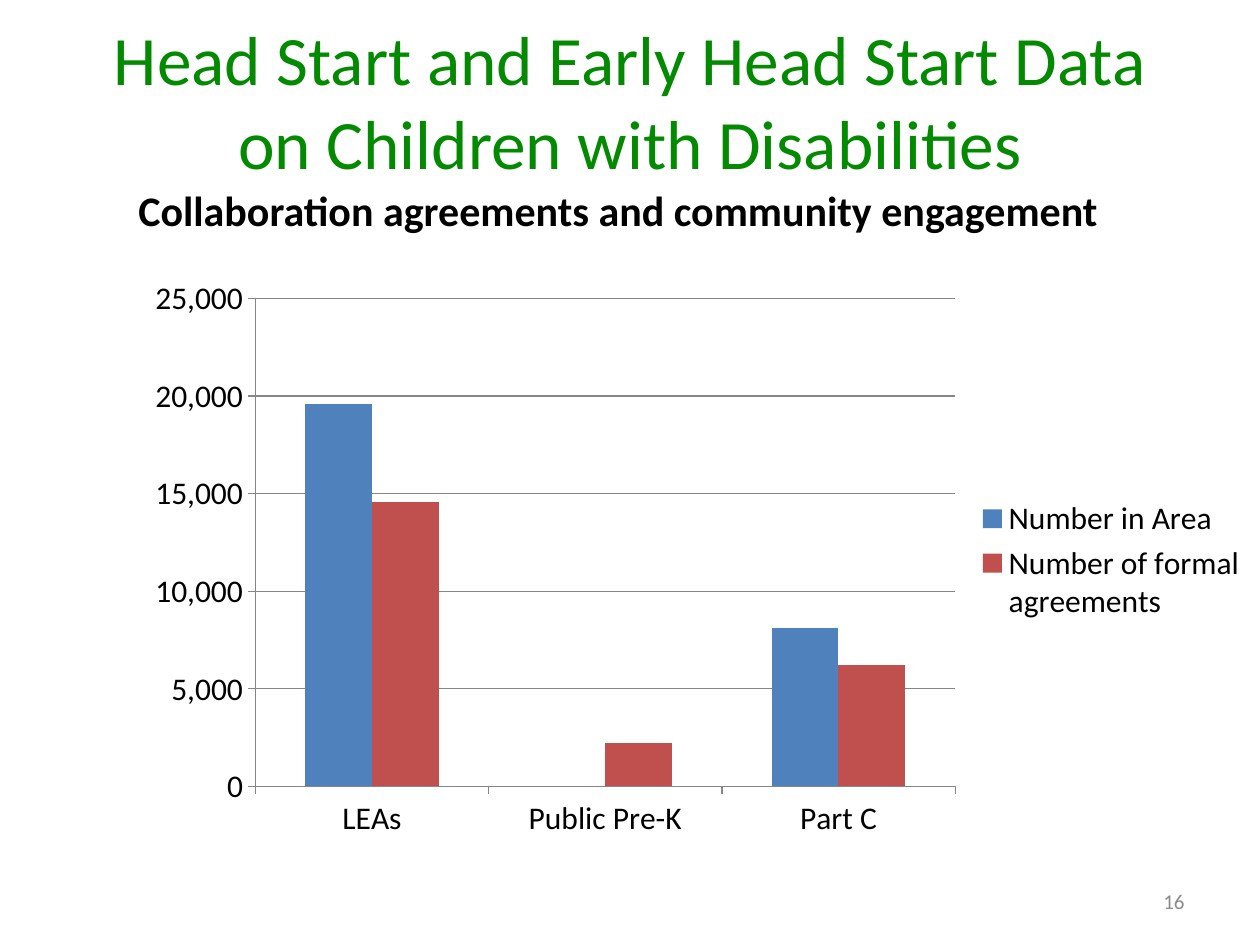
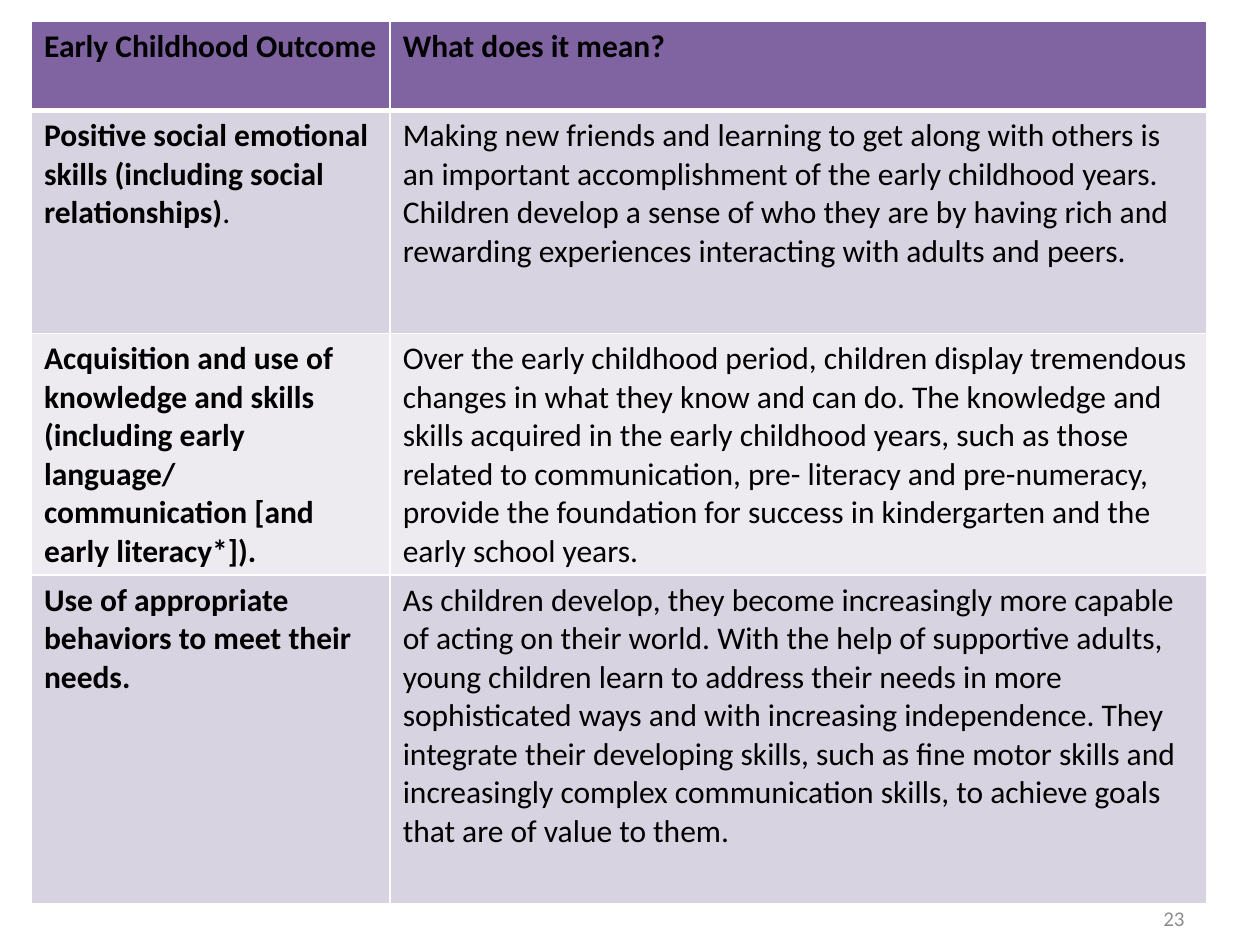
from dataclasses import dataclass

from lxml import etree
from pptx import Presentation
from pptx.chart.data import CategoryChartData
from pptx.dml.color import RGBColor
from pptx.enum.chart import XL_CHART_TYPE as ChartType
from pptx.enum.chart import XL_LEGEND_POSITION as LegendPosition
from pptx.enum.chart import XL_TICK_MARK as TickMark
from pptx.enum.text import MSO_ANCHOR as Anchor
from pptx.enum.text import MSO_AUTO_SIZE as AutoSize
from pptx.enum.text import PP_ALIGN as Align
from pptx.oxml import parse_xml
from pptx.oxml.ns import nsdecls, qn
from pptx.util import Pt

# Shared style
FONT = "Calibri"
BLACK, WHITE, GREEN, GRAY = "000000", "FFFFFF", "038A00", "8C8C8C"
AXIS_GRAY = "868686"
HEADER_PURPLE, BAND_DARK, BAND_LIGHT = "8064A2", "D8D3E0", "EDEAF0"
TITLE_ONLY, BLANK = 5, 6


@dataclass
class Box:
    left: float
    top: float
    width: float
    height: float

    def lengths(self) -> tuple:
        return Pt(self.left), Pt(self.top), Pt(self.width), Pt(self.height)


@dataclass
class Span:
    text: str
    size: float = 18
    bold: bool = False
    color: str = BLACK


@dataclass
class Series:
    name: str
    values: tuple
    color: str


@dataclass
class Outcome:
    name: tuple
    meaning: str
    height: float


CATEGORIES = ("LEAs", "Public Pre-K", "Part C")
AGREEMENT_SERIES = (
    Series("Number in Area", (19600, None, 8100), "4F81BD"),
    Series("Number of formal agreements", (14600, 2200, 6200), "C0504D"),
)

COLUMN_WIDTHS = (205, 466.75)
HEADER_HEIGHT = 51.2
HEADINGS = ("Early Childhood Outcome", "What does it mean?")
OUTCOMES = (
    Outcome(
        (Span("Positive social emotional skills (including social relationships)", bold=True),
         Span(".")),
        "Making new friends and learning to get along with others is an important "
        "accomplishment of the early childhood years. Children develop a sense of who "
        "they are by having rich and rewarding experiences interacting with adults and peers.",
        127.5),
    Outcome(
        (Span("Acquisition and use of knowledge and skills (including early language/ "
              "communication [and early literacy*]).", bold=True),),
        "Over the early childhood period, children display tremendous changes in what they "
        "know and can do. The knowledge and skills acquired in the early childhood years, "
        "such as those related to communication, pre- literacy and pre-numeracy, provide the "
        "foundation for success in kindergarten and the early school years.",
        138),
    Outcome(
        (Span("Use of appropriate behaviors to meet their needs.", bold=True),),
        "As children develop, they become increasingly more capable of acting on their world. "
        "With the help of supportive adults, young children learn to address their needs in "
        "more sophisticated ways and with increasing independence. They integrate their "
        "developing skills, such as fine motor skills and increasingly complex communication "
        "skills, to achieve goals that are of value to them.",
        188),
)


def rgb(color: str) -> RGBColor:
    return RGBColor.from_string(color)


def style_font(font, size: float, color: str, bold: bool = False) -> None:
    font.name, font.size, font.bold = FONT, Pt(size), bold
    font.color.rgb = rgb(color)


def write(para, *spans: Span) -> None:
    for span in spans:
        run = para.add_run()
        run.text = span.text
        style_font(run.font, span.size, span.color, span.bold)


def add_title(page, box: Box, text: str) -> None:
    title = page.shapes.title
    title.left, title.top, title.width, title.height = box.lengths()
    frame = title.text_frame
    frame.auto_size, frame.vertical_anchor = AutoSize.NONE, Anchor.MIDDLE
    para = frame.paragraphs[0]
    para.alignment = Align.CENTER
    write(para, Span(text, 39.6, color=GREEN))


def add_text(page, box: Box, span: Span, align=Align.LEFT, anchor=Anchor.TOP) -> None:
    frame = page.shapes.add_textbox(*box.lengths()).text_frame
    frame.word_wrap, frame.vertical_anchor = True, anchor
    para = frame.paragraphs[0]
    para.alignment = align
    write(para, span)


def add_page_number(page, number: int, top: float) -> None:
    add_text(page, Box(516, top, 168, 28.75), Span(str(number), 12, color=GRAY),
             Align.RIGHT, Anchor.MIDDLE)


def place_plot(chart, x: float, y: float, width: float, height: float) -> None:
    """Fix the inner plot area, in fractions of the chart."""
    area = chart.plots[0]._element.getparent()
    for old in area.findall(qn("c:layout")):
        area.remove(old)
    sizes = "".join(f'<c:{tag} val="{value}"/>'
                    for tag, value in zip("xywh", (x, y, width, height)))
    area.insert(0, parse_xml(
        f'<c:layout {nsdecls("c")}><c:manualLayout><c:layoutTarget val="inner"/>'
        f'<c:xMode val="edge"/><c:yMode val="edge"/>{sizes}</c:manualLayout></c:layout>'))


def add_column_chart(page, box: Box) -> None:
    data = CategoryChartData(number_format="#,##0")
    data.categories = CATEGORIES
    for series in AGREEMENT_SERIES:
        data.add_series(series.name, series.values)
    chart = page.shapes.add_chart(ChartType.COLUMN_CLUSTERED, *box.lengths(), data).chart
    style_font(chart.font, 18, BLACK)
    chart.has_title = False
    chart.has_legend = True
    chart.legend.position = LegendPosition.RIGHT
    chart.legend.include_in_layout = False

    # Bars
    plot = chart.plots[0]
    plot.gap_width, plot.overlap, plot.vary_by_categories = 150, 0, False
    for drawn, series in zip(plot.series, AGREEMENT_SERIES):
        drawn.format.fill.solid()
        drawn.format.fill.fore_color.rgb = rgb(series.color)

    # Axes
    values = chart.value_axis
    values.minimum_scale, values.maximum_scale, values.major_unit = 0, 25000, 5000
    values.has_major_gridlines = True
    for axis in (chart.category_axis, values):
        axis.major_tick_mark = TickMark.OUTSIDE
    for line_owner in (chart.category_axis, values, values.major_gridlines):
        line_owner.format.line.width = Pt(0.75)
        line_owner.format.line.color.rgb = rgb(AXIS_GRAY)
    place_plot(chart, 0.11, 0.05, 0.62, 0.84)


def set_borders(cell, top: float, bottom: float) -> None:
    properties = cell._tc.get_or_add_tcPr()
    widths = {"lnL": 1, "lnR": 1, "lnT": top, "lnB": bottom}
    for position, (tag, width) in enumerate(widths.items()):
        line = etree.Element(qn(f"a:{tag}"), w=str(Pt(width)))
        fill = etree.SubElement(line, qn("a:solidFill"))
        etree.SubElement(fill, qn("a:srgbClr"), val=WHITE)
        properties.insert(position, line)


def add_outcome_table(page, left: float, top: float) -> None:
    heights = [HEADER_HEIGHT] + [outcome.height for outcome in OUTCOMES]
    rows = [[(Span(heading, bold=True),) for heading in HEADINGS]]
    rows += [[outcome.name, (Span(outcome.meaning),)] for outcome in OUTCOMES]
    box = Box(left, top, sum(COLUMN_WIDTHS), sum(heights))
    table = page.shapes.add_table(len(rows), len(HEADINGS), *box.lengths()).table
    for column, width in zip(table.columns, COLUMN_WIDTHS):
        column.width = Pt(width)
    for row_index, (spans_in_row, height) in enumerate(zip(rows, heights)):
        table.rows[row_index].height = Pt(height)
        if row_index == 0:
            color = HEADER_PURPLE
        else:
            color = BAND_DARK if row_index % 2 else BAND_LIGHT
        for column_index, spans in enumerate(spans_in_row):
            cell = table.cell(row_index, column_index)
            cell.fill.solid()
            cell.fill.fore_color.rgb = rgb(color)
            set_borders(cell, top=3 if row_index == 1 else 1,
                        bottom=3 if row_index == 0 else 1)
            write(cell.text_frame.paragraphs[0], *spans)


def build_agreements_page(deck) -> None:
    page = deck.slides.add_slide(deck.slide_layouts[TITLE_ONLY])
    add_title(page, Box(36, 12, 648, 90),
              "Head Start and Early Head Start Data on Children with Disabilities")
    add_text(page, Box(72, 102, 612, 40),
             Span("Collaboration agreements and community engagement", 24, bold=True))
    add_column_chart(page, Box(75, 154, 645, 332))
    add_page_number(page, 16, 500.5)


def build_outcomes_page(deck) -> None:
    page = deck.slides.add_slide(deck.slide_layouts[BLANK])
    add_outcome_table(page, 18, 12)
    add_page_number(page, 23, 510)


def main() -> None:
    deck = Presentation()
    deck.slide_width, deck.slide_height = Pt(720), Pt(540)
    build_agreements_page(deck)
    build_outcomes_page(deck)
    deck.save("out.pptx")


if __name__ == "__main__":
    main()
